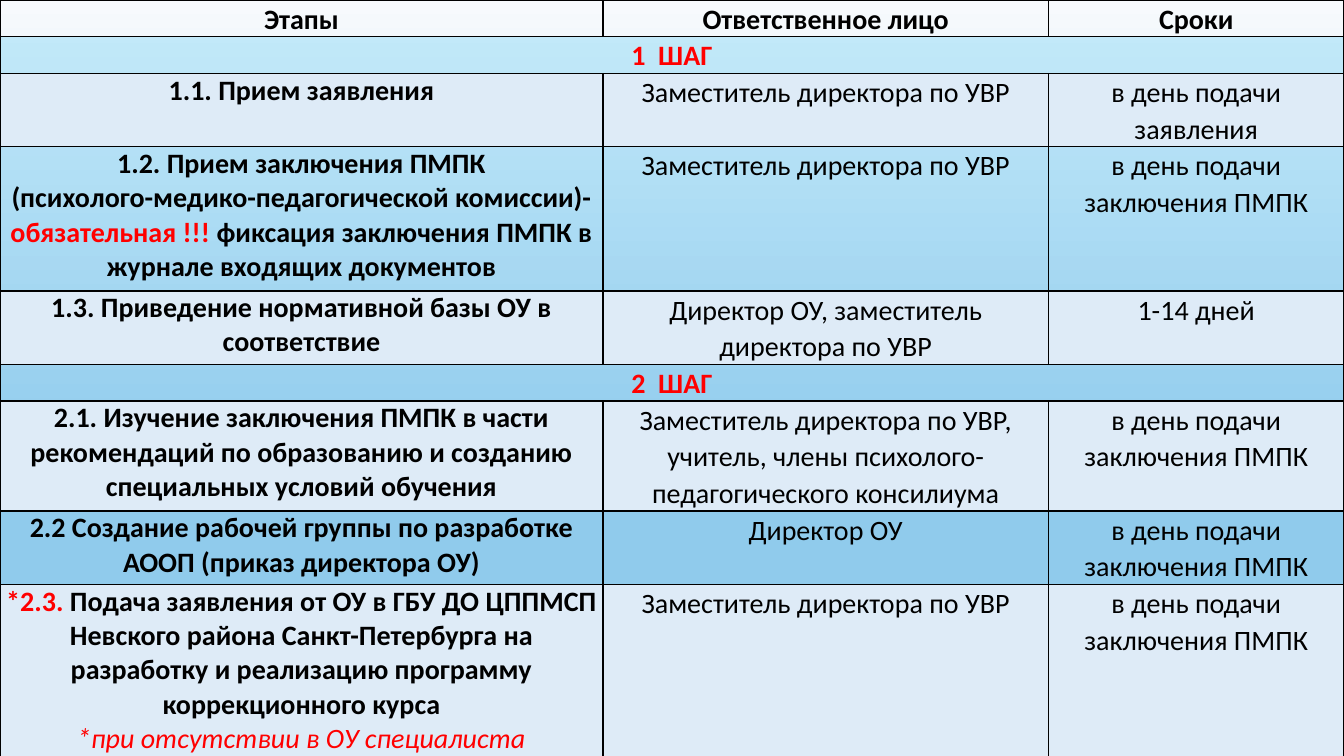
from copy import deepcopy

from pptx import Presentation
from pptx.dml.color import RGBColor
from pptx.enum.text import PP_ALIGN
from pptx.oxml.ns import qn
from pptx.oxml.xmlchemy import OxmlElement
from pptx.util import Inches, Pt

CENTER = PP_ALIGN.CENTER
BLACK = RGBColor(0x00, 0x00, 0x00)
RED = RGBColor(0xFF, 0x00, 0x00)
PALE_BLUE = RGBColor(0xDE, 0xEB, 0xF7)
BRIGHT_BLUE = RGBColor(0x00, 0xB0, 0xF0)
BACKGROUND_STOPS = [
    (0, RGBColor(0xF7, 0xFA, 0xFD)),
    (0.62, RGBColor(0xB5, 0xD2, 0xEC)),
    (0.83, RGBColor(0xB5, 0xD2, 0xEC)),
    (1, RGBColor(0xCE, 0xE1, 0xF2)),
]
TINT_ALPHA = 20
LOOSE = 1.07
COLUMN_WIDTHS = [5.98, 4.42, 2.93]
ROW_HEIGHTS = [0.36, 0.36, 0.71, 1.43, 0.71, 0.36, 1.07, 0.71, 1.78]

HEADINGS = ["Этапы", "Ответственное лицо", "Сроки"]
DEPUTY = "Заместитель директора по УВР"
CONCLUSION_DAY = "в день подачи заключения ПМПК"
STEPS = [
    ("1  ШАГ", [
        ([[("1.1. Прием заявления", {})]], DEPUTY, "в день подачи заявления"),
        ([[("1.2. Прием заключения ПМПК", {})],
          [("(психолого-медико-педагогической комиссии)- ", {}),
           ("обязательная !!! ", {"color": RED}),
           ("фиксация заключения ПМПК в журнале входящих документов", {})]],
         DEPUTY, CONCLUSION_DAY),
        ([[("1.3. Приведение нормативной базы ОУ в соответствие", {})]],
         "Директор ОУ, заместитель директора по УВР", "1-14 дней"),
    ]),
    ("2  ШАГ", [
        ([[("2.1. Изучение заключения ПМПК в части рекомендаций по образованию "
            "и созданию специальных условий обучения", {})]],
         "Заместитель директора по УВР, учитель, члены "
         "психолого-педагогического консилиума", CONCLUSION_DAY),
        ([[("2.2 Создание рабочей группы по разработке АООП "
            "(приказ директора ОУ)", {})]], "Директор ОУ", CONCLUSION_DAY),
        ([[("*2.3. ", {"color": RED}),
           ("Подача заявления от ОУ в ГБУ ДО ЦППМСП Невского района "
            "Санкт-Петербурга на разработку и реализацию программу "
            "коррекционного курса", {})],
          [("*при отсутствии в ОУ специалиста",
            {"color": RED, "bold": False, "italic": True})]],
         DEPUTY, CONCLUSION_DAY),
    ]),
]


def paint_background(slide):
    fill = slide.background.fill
    fill.gradient()
    fill.gradient_angle = 270
    stop_list = slide.element.find(".//" + qn("a:gsLst"))
    while len(stop_list) < len(BACKGROUND_STOPS):
        stop_list.append(deepcopy(stop_list[0]))
    for stop, (position, color) in zip(fill.gradient_stops, BACKGROUND_STOPS):
        stop.position = position
        stop.color.rgb = color


def add_run(paragraph, text, color=BLACK, bold=True, italic=False, size=20):
    run = paragraph.add_run()
    run.text = text
    font = run.font
    font.name = "Calibri"
    font.size = Pt(size)
    font.bold = bold
    font.italic = italic
    font.color.rgb = color


def write_cell(cell, paragraphs, spacing=LOOSE):
    cell.margin_left = cell.margin_right = Inches(0.04)
    cell.margin_top = cell.margin_bottom = 0
    frame = cell.text_frame
    for index, runs in enumerate(paragraphs):
        paragraph = frame.add_paragraph() if index else frame.paragraphs[0]
        paragraph.alignment = CENTER
        paragraph.line_spacing = spacing
        for text, style in runs:
            add_run(paragraph, text, **style)


def outline_cell(cell):
    properties = cell._tc.get_or_add_tcPr()
    for index, side in enumerate(("a:lnL", "a:lnR", "a:lnT", "a:lnB")):
        border = OxmlElement(side)
        border.set("w", str(Pt(1)))
        solid = OxmlElement("a:solidFill")
        color = OxmlElement("a:srgbClr")
        color.set("val", str(BLACK))
        solid.append(color)
        border.append(solid)
        properties.insert(index, border)


def fill_row(row, color=None, alpha=None):
    for cell in row.cells:
        outline_cell(cell)
        if color is None:
            cell.fill.background()
            continue
        cell.fill.solid()
        cell.fill.fore_color.rgb = color
        if alpha is not None:
            transparency = OxmlElement("a:alpha")
            transparency.set("val", str(alpha * 1000))
            cell._tc.tcPr.find(qn("a:solidFill"))[0].append(transparency)


def write_header(row):
    fill_row(row)
    for cell, heading in zip(row.cells, HEADINGS):
        write_cell(cell, [[(heading, {})]])


def write_step(row, title):
    fill_row(row, BRIGHT_BLUE, TINT_ALPHA)
    first, *_, last = row.cells
    first.merge(last)
    write_cell(first, [[(title, {"color": RED})]])


def write_stage(row, stage, tinted):
    if tinted:
        fill_row(row, BRIGHT_BLUE, TINT_ALPHA)
    else:
        fill_row(row, PALE_BLUE)
    description, *details = stage
    stage_cell, *detail_cells = row.cells
    write_cell(stage_cell, description, spacing=1.0)
    for cell, detail in zip(detail_cells, details):
        write_cell(cell, [[(detail, {"bold": False})]])


def add_schedule(slide):
    table = slide.shapes.add_table(
        len(ROW_HEIGHTS), len(COLUMN_WIDTHS), 0, 0,
        Inches(sum(COLUMN_WIDTHS)), Inches(sum(ROW_HEIGHTS))).table
    table.first_row = table.horz_banding = False
    for column, width in zip(table.columns, COLUMN_WIDTHS):
        column.width = Inches(width)
    for row, height in zip(table.rows, ROW_HEIGHTS):
        row.height = Inches(height)

    rows = iter(table.rows)
    write_header(next(rows))
    for title, stages in STEPS:
        write_step(next(rows), title)
        for index, stage in enumerate(stages):
            write_stage(next(rows), stage, tinted=index % 2 == 1)


def main():
    presentation = Presentation()
    presentation.slide_width = Inches(13.33)
    presentation.slide_height = Inches(7.5)
    slide = presentation.slides.add_slide(presentation.slide_layouts[6])
    paint_background(slide)
    add_schedule(slide)
    presentation.save("out.pptx")


if __name__ == "__main__":
    main()
